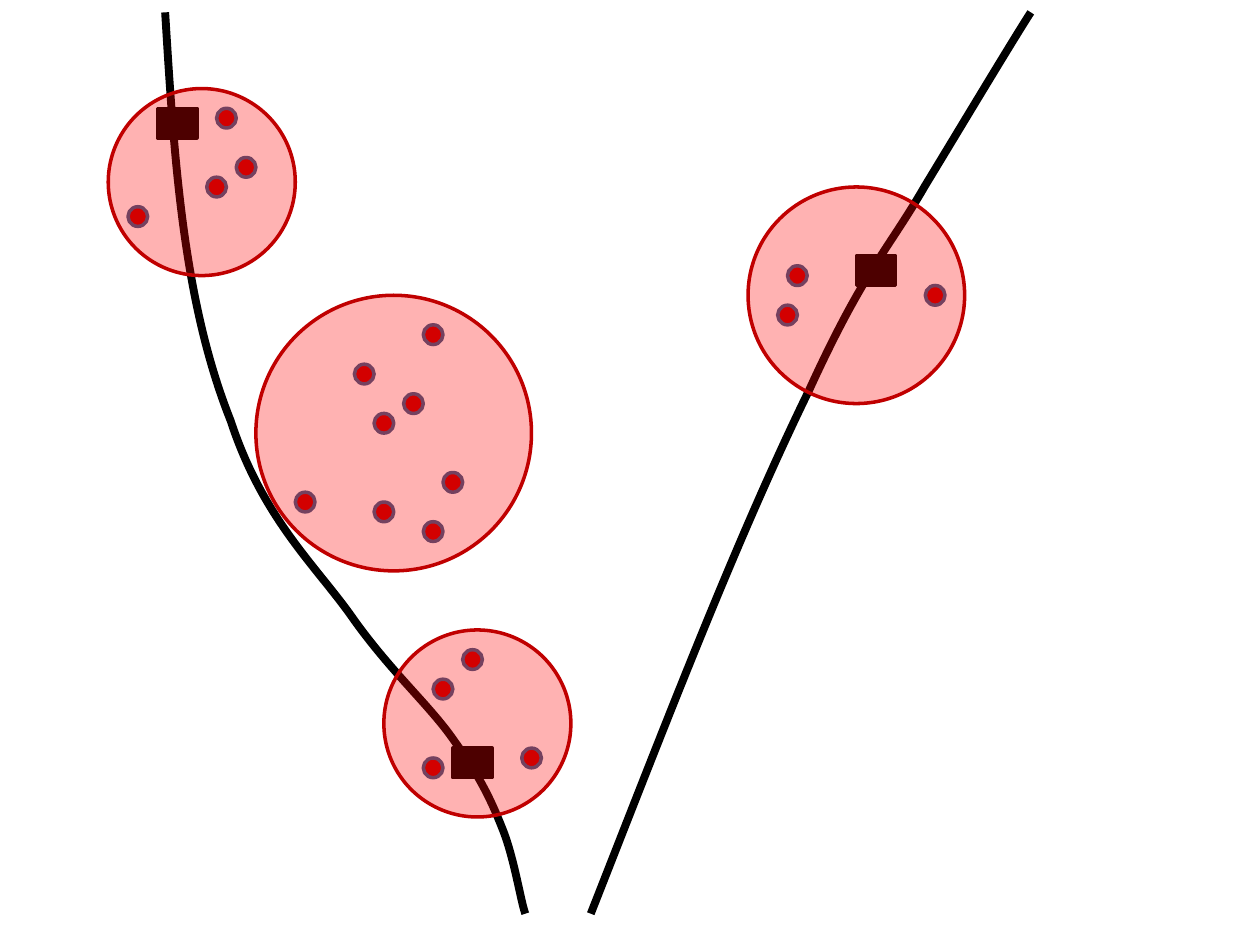
from dataclasses import dataclass

from lxml.etree import SubElement
from pptx import Presentation
from pptx.dml.color import RGBColor
from pptx.enum.shapes import MSO_SHAPE
from pptx.oxml.ns import qn
from pptx.util import Cm, Pt

SLIDE_WIDTH, SLIDE_HEIGHT = 25.4, 19.05
GRID = SLIDE_WIDTH / 128  # squares of the drawing grid, in cm

# Curves in cm: a start point, then two control points and an end point each
LEFT_ROAD = [
    (3.33, 0.25),
    (3.51, 3.15), (3.68, 6.05), (4.65, 8.48),
    (5.31, 10.49), (6.4, 11.43), (7.14, 12.5),
    (7.9, 13.56), (8.66, 14.22), (9.14, 14.91),
    (9.65, 15.62), (9.88, 16.08), (10.11, 16.66),
    (10.36, 17.25), (10.49, 18.14), (10.59, 18.42),
]
RIGHT_ROAD = [
    (11.91, 18.42),
    (13.39, 14.66), (14.83, 10.9), (16.31, 7.87),
    (17.42, 5.44), (17.91, 5.03), (18.64, 3.76),
    (19.23, 2.79), (20.4, 0.84), (20.78, 0.25),
]

# Grid squares: left and top of stations, centres of dots,
# left, top and diameter of zones
STATIONS = [(16, 11), (46, 76), (87, 26)]
DOTS = [
    (37, 38), (42, 41), (39, 43), (39, 52), (46, 49), (44, 54),
    (22, 19), (25, 17), (14, 22), (23, 12),
    (45, 70), (48, 67), (54, 77), (44, 78),
    (44, 34), (31, 51),
    (81, 28), (95, 30), (80, 32),
]
ZONES = [(11, 9, 19), (26, 30, 28), (76, 19, 22), (39, 64, 19)]


@dataclass(frozen=True)
class Theme:
    road: str = "000000"
    dot: str = "C00000"
    dot_edge: str = "395E89"
    zone: str = "FF0000"
    zone_edge: str = "C00000"
    zone_opacity: int = 30
    road_width: float = 4.5
    edge_width: float = 2


class MapSlide:
    def __init__(self, slide, theme):
        self.slide = slide
        self.theme = theme
        self.start_layer()

    def start_layer(self):
        """Open a new group that receives the elements drawn next."""
        self.layer = self.slide.shapes.add_group_shape().shapes

    def outline(self, shape, color, width):
        shape.shadow.inherit = False
        shape.line.color.rgb = RGBColor.from_string(color)
        shape.line.width = Pt(width)

    def preset(self, kind, left, top, width, height, fill, edge):
        """Add a preset shape measured in grid squares."""
        frame = [Cm(value * GRID) for value in (left, top, width, height)]
        shape = self.layer.add_shape(kind, *frame)
        shape.fill.solid()
        shape.fill.fore_color.rgb = RGBColor.from_string(fill)
        self.outline(shape, edge, self.theme.edge_width)
        return shape

    def road(self, points):
        start, *others = [(Cm(x), Cm(y)) for x, y in points]
        builder = self.layer.build_freeform(*start)
        builder.add_line_segments(others, close=False)
        shape = builder.convert_to_shape()
        shape.fill.background()
        self.outline(shape, self.theme.road, self.theme.road_width)
        self.bend(shape)

    def bend(self, shape):
        """Join every three straight segments into one cubic curve."""
        segments = list(shape.element.iter(qn("a:lnTo")))
        for first in range(0, len(segments), 3):
            curve = SubElement(segments[first].getparent(), qn("a:cubicBezTo"))
            for segment in segments[first:first + 3]:
                curve.append(segment[0])
                segment.getparent().remove(segment)

    def station(self, left, top):
        color = self.theme.road
        self.preset(MSO_SHAPE.RECTANGLE, left, top, 4, 3, color, color)

    def dot(self, x, y):
        self.preset(MSO_SHAPE.OVAL, x - 1, y - 1, 2, 2,
                    self.theme.dot, self.theme.dot_edge)

    def zone(self, left, top, diameter):
        shape = self.preset(MSO_SHAPE.OVAL, left, top, diameter, diameter,
                            self.theme.zone, self.theme.zone_edge)
        fill = shape.element.spPr.find(qn("a:solidFill"))
        alpha = SubElement(fill[0], qn("a:alpha"))
        alpha.set("val", str(self.theme.zone_opacity * 1000))


def main():
    deck = Presentation()
    deck.slide_width, deck.slide_height = Cm(SLIDE_WIDTH), Cm(SLIDE_HEIGHT)
    page = MapSlide(deck.slides.add_slide(deck.slide_layouts[6]), Theme())

    for points in (LEFT_ROAD, RIGHT_ROAD):
        page.road(points)
    for corner in STATIONS:
        page.station(*corner)

    page.start_layer()
    for centre in DOTS:
        page.dot(*centre)

    page.start_layer()
    for circle in ZONES:
        page.zone(*circle)

    deck.save("out.pptx")


if __name__ == "__main__":
    main()
